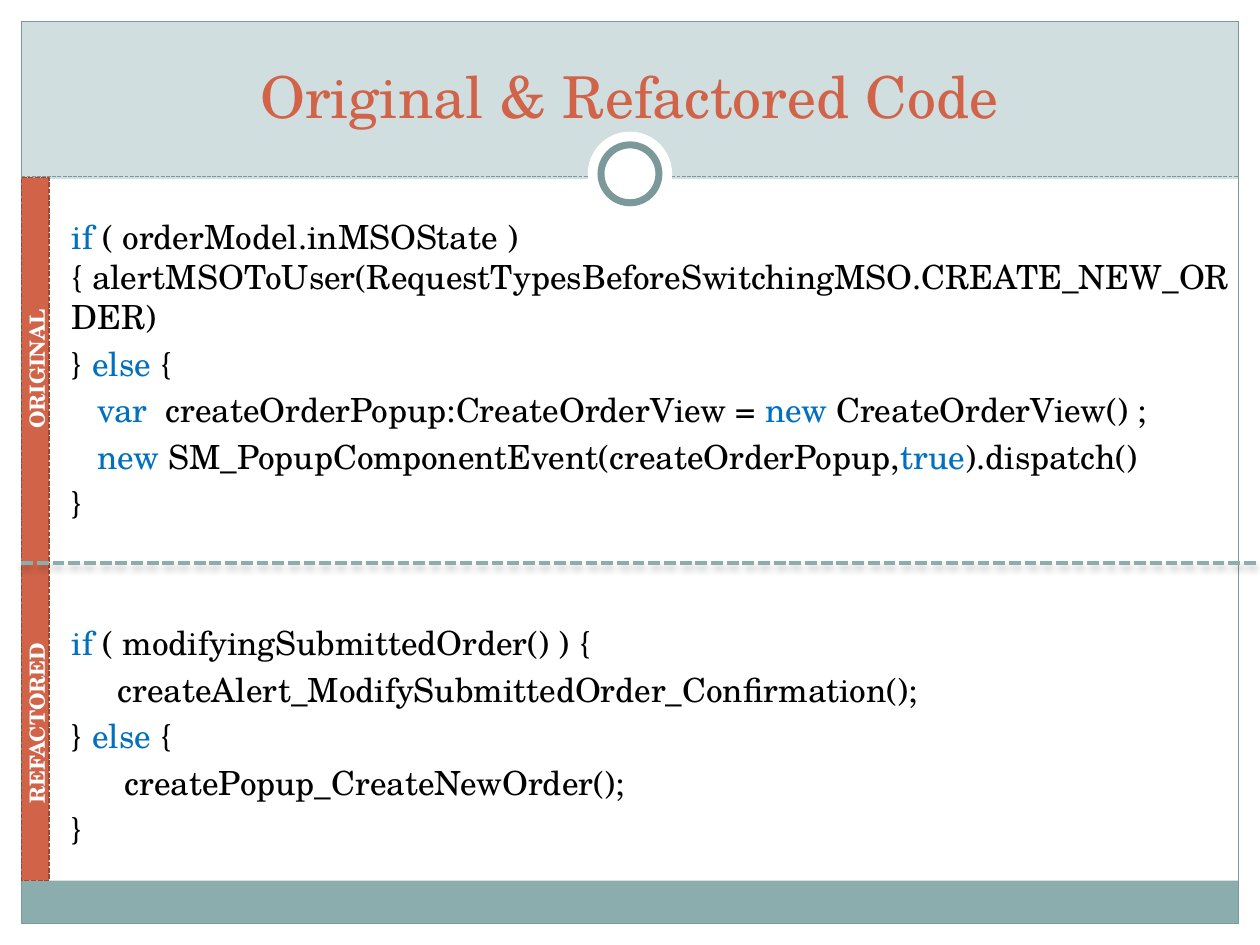
from dataclasses import dataclass

from lxml.etree import SubElement
from pptx import Presentation
from pptx.dml.color import RGBColor
from pptx.enum.dml import MSO_LINE
from pptx.enum.shapes import MSO_CONNECTOR, MSO_SHAPE
from pptx.enum.text import MSO_ANCHOR, MSO_AUTO_SIZE, PP_ALIGN
from pptx.oxml.ns import qn
from pptx.util import Inches, Pt


@dataclass(frozen=True)
class Theme:
    font: str = "TeX Gyre Schola"
    white: str = "FFFFFF"
    black: str = "000000"
    keyword: str = "0070C0"
    accent: str = "D16349"
    accent_dark: str = "9B4936"
    band: str = "D1DEDF"
    teal: str = "8CADAE"
    teal_dark: str = "7C999A"
    title_size: float = 33
    code_size: float = 19
    label_size: float = 12
    code_gap: float = 3.8
    block_gap: float = 57


T = Theme()

# Each line: left margin in inches, then code with keywords between bars.
ORIGINAL = [
    (0.3, "|if| ( orderModel.inMSOState ) { alertMSOToUser("
          "RequestTypesBeforeSwitchingMSO.CREATE_NEW_ORDER)"),
    (0.3, "} |else |{"),
    (0.5, "|var|  createOrderPopup:CreateOrderView = |new| CreateOrderView() ;"),
    (0.5, "|new| SM_PopupComponentEvent(createOrderPopup,|true|).dispatch()"),
    (0.3, "}"),
]
REFACTORED = [
    (0.3, "|if| ( modifyingSubmittedOrder() ) {"),
    (0.3, "     createAlert_ModifySubmittedOrder_Confirmation();"),
    (0.3, "} |else |{"),
    (0.5, "   createPopup_CreateNewOrder();"),
    (0.3, "}"),
]


def rgb(color):
    return RGBColor.from_string(color)


def add_text(p, text, size, color, bold=False, align=None):
    r = p.add_run()
    r.text = text
    r.font.name, r.font.size, r.font.bold = T.font, Pt(size), bold
    r.font.color.rgb = rgb(color)
    if align is not None:
        p.alignment = align


def set_line(line, color, width, dash=None):
    line.color.rgb = rgb(color)
    line.width = Pt(width)
    if dash:
        line.dash_style = dash


def add_box(s, kind, x, y, w, h, fill=None, line=None, width=0.75, dash=None):
    sp = s.shapes.add_shape(kind, Inches(x), Inches(y), Inches(w), Inches(h))
    sp.shadow.inherit = False
    if fill:
        sp.fill.solid()
        sp.fill.fore_color.rgb = rgb(fill)
    else:
        sp.fill.background()
    if line:
        set_line(sp.line, line, width, dash)
    else:
        sp.line.fill.background()


def add_rule(s, x1, x2, y, color, width, shadow=False):
    """Draw a dashed horizontal rule, with a soft shadow below if asked."""
    c = s.shapes.add_connector(MSO_CONNECTOR.STRAIGHT, Inches(x1), Inches(y),
                               Inches(x2), Inches(y))
    set_line(c.line, color, width, MSO_LINE.SQUARE_DOT)
    effects = SubElement(c.element.spPr, qn("a:effectLst"))
    if shadow:
        outer = SubElement(effects, qn("a:outerShdw"), blurRad=str(Pt(4)),
                           dist=str(Pt(2)), dir="5400000", rotWithShape="0")
        clr = SubElement(outer, qn("a:srgbClr"), val=T.black)
        SubElement(clr, qn("a:alpha"), val="35000")


def add_ring(s, cx, cy):
    """Draw the white disc and the ring centred on it."""
    for d, line in ((0.67, None), (0.46, T.teal_dark)):
        add_box(s, MSO_SHAPE.OVAL, cx - d / 2, cy - d / 2, d, d, T.white, line, 4)


def add_frame(s, x, y, w, h):
    band_h, foot_h = 1.25, 0.34
    add_box(s, MSO_SHAPE.RECTANGLE, x, y, w, band_h, T.band)
    add_box(s, MSO_SHAPE.RECTANGLE, x, y + h - foot_h, w, foot_h, T.teal)
    add_box(s, MSO_SHAPE.RECTANGLE, x, y, w, h, line=T.teal_dark)
    add_rule(s, x, x + w, y + band_h - 0.02, T.teal_dark, 0.75)
    add_ring(s, x + w / 2, y + band_h - 0.04)


def place(sp, x, y, w, h):
    """Set a placeholder's box, bring it to the front and return its text frame."""
    sp.left, sp.top, sp.width, sp.height = (Inches(v) for v in (x, y, w, h))
    sp.element.getparent().append(sp.element)
    tf = sp.text_frame
    tf.word_wrap, tf.auto_size = True, MSO_AUTO_SIZE.NONE
    return tf


def add_title(s, text, x, y, w, h):
    tf = place(s.shapes.title, x, y, w, h)
    tf.vertical_anchor = MSO_ANCHOR.BOTTOM
    add_text(tf.paragraphs[0], text, T.title_size, T.accent, align=PP_ALIGN.CENTER)


def add_code(s, blocks, x, y, w, h):
    tf = place(s.placeholders[1], x, y, w, h)
    tf.vertical_anchor = MSO_ANCHOR.TOP
    for b, block in enumerate(blocks):
        for i, (margin, code) in enumerate(block):
            first = b == i == 0
            p = tf.paragraphs[0] if first else tf.add_paragraph()
            gap = T.code_gap if i else T.block_gap
            p.space_before = Pt(0 if first else gap)
            pPr = p._p.get_or_add_pPr()
            pPr.set("marL", str(Inches(margin)))
            pPr.set("indent", "0")
            SubElement(pPr, qn("a:buNone"))
            for n, part in enumerate(code.split("|")):
                if part:
                    add_text(p, part, T.code_size, T.keyword if n % 2 else T.black)


def add_side_label(s, text, cx, cy, length):
    """Add a label that reads upwards, centred on a point."""
    h = 0.3
    sp = s.shapes.add_textbox(Inches(cx - length / 2), Inches(cy - h / 2),
                              Inches(length), Inches(h))
    sp.rotation = 270
    sp.text_frame.word_wrap = True
    add_text(sp.text_frame.paragraphs[0], text, T.label_size, T.white,
             bold=True, align=PP_ALIGN.CENTER)


def main():
    prs = Presentation()
    prs.slide_width, prs.slide_height = Inches(10), Inches(7.5)
    s = prs.slides.add_slide(prs.slide_layouts[1])
    add_frame(s, 0.17, 0.17, 9.66, 7.16)
    add_box(s, MSO_SHAPE.RECTANGLE, 0.17, 1.41, 0.22, 5.58, T.accent,
            T.accent_dark, 0.9, MSO_LINE.SQUARE_DOT)
    add_code(s, (ORIGINAL, REFACTORED), 0.17, 1.67, 9.83, 5.29)
    add_title(s, "Original & Refactored Code", 0.33, 0.25, 9.33, 0.83)
    add_rule(s, 0.17, 10, 4.47, T.teal, 2.25, shadow=True)
    add_side_label(s, "ORIGINAL", 0.29, 2.93, 3.05)
    add_side_label(s, "REFACTORED", 0.29, 5.74, 2.52)
    prs.save("out.pptx")


if __name__ == "__main__":
    main()
